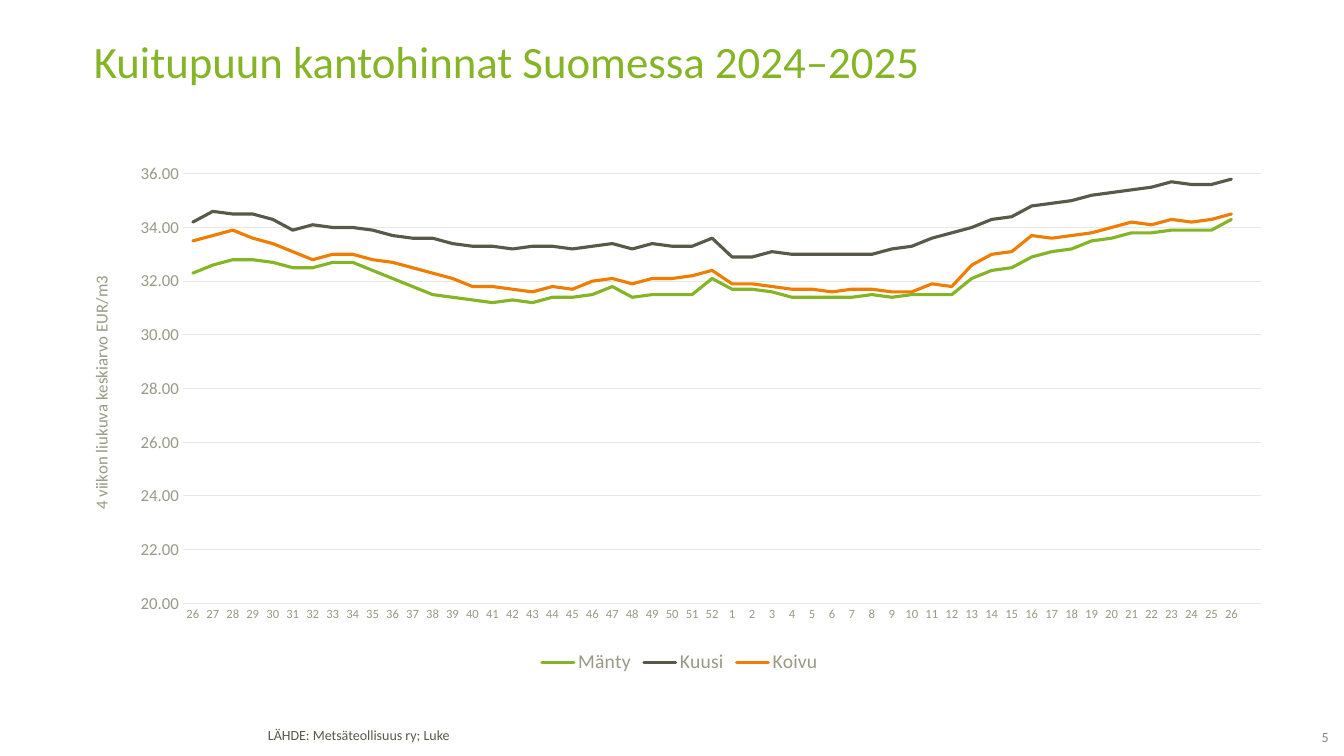
from dataclasses import dataclass

from lxml import etree
from pptx import Presentation
from pptx import util as u
from pptx.chart.data import CategoryChartData
from pptx.dml.color import RGBColor
from pptx.enum import chart as kinds
from pptx.enum import text
from pptx.oxml import ns


@dataclass(frozen=True)
class Theme:
    font: str = "Calibri"
    green: str = "85B526"
    dark: str = "59594A"
    orange: str = "EF7D00"
    label: str = "999984"
    grid: str = "E7E7E3"
    source: str = "58594A"
    number: str = "878787"
    title_size: float = 32
    legend_size: float = 14
    axis_size: float = 12
    small_size: float = 10
    week_size: float = 9
    series_width: float = 2.25
    grid_width: float = 0.75


THEME = Theme()
WIDTH, HEIGHT = u.Inches(13.33), u.Inches(7.5)
COLUMNS = ROWS = 100
PLOT_SHARES = {"x": 0.083, "y": 0.03, "w": 0.905, "h": 0.826}

WEEKS = [str(week) for week in [*range(26, 53), *range(1, 27)]] + [""]
PRICES = {
    "Mänty": (THEME.green, [
        32.3, 32.6, 32.8, 32.8, 32.7, 32.5, 32.5, 32.7, 32.7, 32.4, 32.1,
        31.8, 31.5, 31.4, 31.3, 31.2, 31.3, 31.2, 31.4, 31.4, 31.5, 31.8,
        31.4, 31.5, 31.5, 31.5, 32.1, 31.7, 31.7, 31.6, 31.4, 31.4, 31.4,
        31.4, 31.5, 31.4, 31.5, 31.5, 31.5, 32.1, 32.4, 32.5, 32.9, 33.1,
        33.2, 33.5, 33.6, 33.8, 33.8, 33.9, 33.9, 33.9, 34.3, None]),
    "Kuusi": (THEME.dark, [
        34.2, 34.6, 34.5, 34.5, 34.3, 33.9, 34.1, 34, 34, 33.9, 33.7,
        33.6, 33.6, 33.4, 33.3, 33.3, 33.2, 33.3, 33.3, 33.2, 33.3, 33.4,
        33.2, 33.4, 33.3, 33.3, 33.6, 32.9, 32.9, 33.1, 33, 33, 33,
        33, 33, 33.2, 33.3, 33.6, 33.8, 34, 34.3, 34.4, 34.8, 34.9,
        35, 35.2, 35.3, 35.4, 35.5, 35.7, 35.6, 35.6, 35.8, None]),
    "Koivu": (THEME.orange, [
        33.5, 33.7, 33.9, 33.6, 33.4, 33.1, 32.8, 33, 33, 32.8, 32.7,
        32.5, 32.3, 32.1, 31.8, 31.8, 31.7, 31.6, 31.8, 31.7, 32, 32.1,
        31.9, 32.1, 32.1, 32.2, 32.4, 31.9, 31.9, 31.8, 31.7, 31.7, 31.6,
        31.7, 31.7, 31.6, 31.6, 31.9, 31.8, 32.6, 33, 33.1, 33.7, 33.6,
        33.7, 33.8, 34, 34.2, 34.1, 34.3, 34.2, 34.3, 34.5, None]),
}


def place(column, row, columns, rows):
    across, down = WIDTH / COLUMNS, HEIGHT / ROWS
    return (int(column * across), int(row * down),
            int(columns * across), int(rows * down))


def style_font(font, size, color):
    font.name = THEME.font
    font.size = u.Pt(size)
    font.bold = False
    font.color.rgb = RGBColor.from_string(color)


def style_line(line, width, color):
    line.width = u.Pt(width)
    line.color.rgb = RGBColor.from_string(color)


def add_text(page, area, words, size, color, spacing=1.0,
             align=text.PP_ALIGN.LEFT, anchor=text.MSO_ANCHOR.TOP,
             insets=(0.1, 0.05, 0.1, 0.05)):
    frame = page.shapes.add_textbox(*place(*area)).text_frame
    frame.word_wrap = True
    frame.vertical_anchor = anchor
    (frame.margin_left, frame.margin_top,
     frame.margin_right, frame.margin_bottom) = map(u.Inches, insets)
    para = frame.paragraphs[0]
    para.alignment = align
    para.line_spacing = spacing
    span = para.add_run()
    span.text = words
    style_font(span.font, size, color)


def fix_plot_area(chart):
    plot_area = chart.plots[0]._element.getparent()
    for old in plot_area.findall(ns.qn("c:layout")):
        plot_area.remove(old)
    layout = etree.Element(ns.qn("c:layout"))
    manual = etree.SubElement(layout, ns.qn("c:manualLayout"))
    settings = {"layoutTarget": "inner", "xMode": "edge", "yMode": "edge",
                **PLOT_SHARES}
    for name, value in settings.items():
        etree.SubElement(manual, ns.qn(f"c:{name}")).set("val", str(value))
    plot_area.insert(0, layout)


def style_week_axis(axis):
    axis.major_tick_mark = axis.minor_tick_mark = kinds.XL_TICK_MARK.NONE
    axis.has_major_gridlines = False
    style_font(axis.tick_labels.font, THEME.week_size, THEME.label)
    style_line(axis.format.line, THEME.grid_width, THEME.grid)


def style_price_axis(axis, title):
    axis.minimum_scale, axis.maximum_scale, axis.major_unit = 20, 36, 2
    axis.major_tick_mark = axis.minor_tick_mark = kinds.XL_TICK_MARK.NONE
    axis.format.line.fill.background()
    axis.has_major_gridlines = True
    style_line(axis.major_gridlines.format.line, THEME.grid_width, THEME.grid)
    axis.tick_labels.number_format = "#,##0.00"
    axis.tick_labels.number_format_is_linked = False
    style_font(axis.tick_labels.font, THEME.axis_size, THEME.label)
    span = axis.axis_title.text_frame.paragraphs[0].add_run()
    span.text = title
    style_font(span.font, THEME.axis_size, THEME.label)


def add_price_chart(page, area):
    data = CategoryChartData(number_format="#,##0.00")
    data.categories = WEEKS
    for name, (_, values) in PRICES.items():
        data.add_series(name, values)
    chart = page.shapes.add_chart(
        kinds.XL_CHART_TYPE.LINE, *place(*area), data).chart
    style_font(chart.font, THEME.small_size, THEME.dark)
    chart.has_title = False
    chart.has_legend = True
    chart.legend.position = kinds.XL_LEGEND_POSITION.BOTTOM
    chart.legend.include_in_layout = False
    style_font(chart.legend.font, THEME.legend_size, THEME.label)
    style_week_axis(chart.category_axis)
    style_price_axis(chart.value_axis, "4 viikon liukuva keskiarvo EUR/m3")
    plot = chart.plots[0]
    plot.vary_by_categories = False
    for series in plot.series:
        series.smooth = False
        series.marker.style = kinds.XL_MARKER_STYLE.NONE
        style_line(series.format.line, THEME.series_width,
                   PRICES[series.name][0])
        series.format.line._ln.set("cap", "rnd")
    fix_plot_area(chart)


def main():
    deck = Presentation()
    deck.slide_width, deck.slide_height = WIDTH, HEIGHT
    page = deck.slides.add_slide(deck.slide_layouts[6])
    add_text(page, (19.2, 95.73, 53.86, 3.6), "LÄHDE: Metsäteollisuus ry; Luke",
             THEME.small_size, THEME.source, spacing=0.85)
    add_text(page, (94.9, 96.53, 3.97, 2.53), "5", THEME.small_size,
             THEME.number, align=text.PP_ALIGN.RIGHT,
             anchor=text.MSO_ANCHOR.MIDDLE, insets=(0, 0, 0, 0.04))
    add_text(page, (6.25, 5.2, 87.7, 13.07),
             "Kuitupuun kantohinnat Suomessa 2024–2025",
             THEME.title_size, THEME.green, spacing=0.8)
    add_price_chart(page, (6.25, 20.93, 88.67, 68.8))
    deck.save("out.pptx")


if __name__ == "__main__":
    main()
